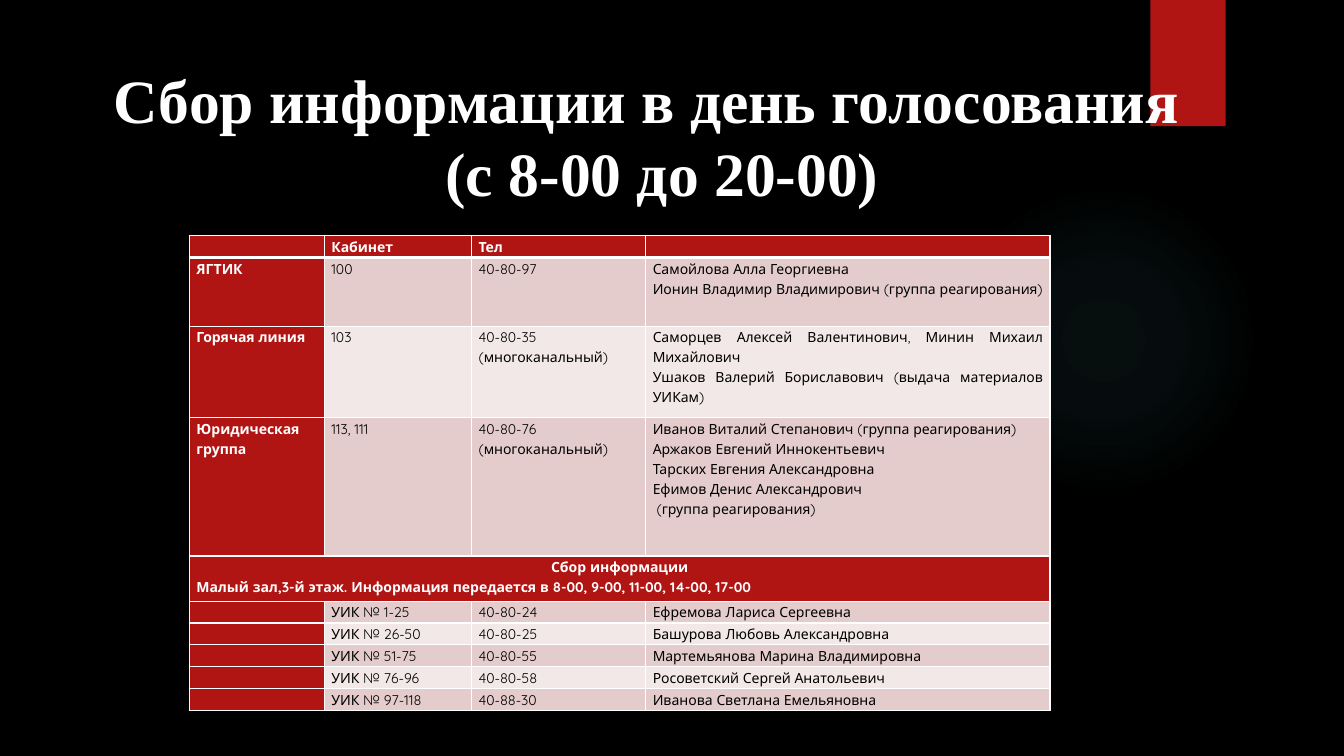
import pptx
import pptx.util
import pptx.dml.color
import pptx.enum.shapes
import pptx.enum.text
import pptx.oxml
import pptx.oxml.ns
from lxml import etree

Cm = pptx.util.Cm
Pt = pptx.util.Pt
ALIGN = pptx.enum.text.PP_ALIGN
SHAPE = pptx.enum.shapes.MSO_SHAPE
qn = pptx.oxml.ns.qn

COLORS = {
    "background": "000000",
    "red": "B01513",
    "white": "FFFFFF",
    "black": "000000",
    "dark_band": "E4CCCC",
    "light_band": "F2E8E7",
    "glow": "50B9C1",
}
TITLE = ["Сбор информации в день голосования ", " (с 8-00 до 20-00)"]
COL_WIDTHS = [3.4, 3.71, 4.39, 10.19]
ROW_HEIGHTS = [0.55, 1.73, 2.31, 3.48, 1.14] + [0.55] * 5
SECTION_ROW = 4
ROWS = [
    ["", "Кабинет", "Тел", ""],
    ["ЯГТИК", "100", "40-80-97",
     "Самойлова Алла Георгиевна\n"
     "Ионин Владимир Владимирович (группа реагирования)"],
    ["Горячая линия", "103", "40-80-35 (многоканальный)",
     "Саморцев Алексей Валентинович, Минин Михаил Михайлович\n"
     "Ушаков Валерий Бориславович (выдача материалов УИКам)"],
    ["Юридическая группа ", "113, 111", "40-80-76 (многоканальный)",
     "Иванов Виталий Степанович (группа реагирования)\n"
     "Аржаков Евгений Иннокентьевич\n"
     "Тарских Евгения Александровна\n"
     "Ефимов Денис Александрович\n"
     " (группа реагирования)"],
    ["Сбор информации\n"
     "Малый зал,3-й этаж. Информация передается в 8-00, 9-00, 11-00, 14-00, 17-00",
     "", "", ""],
    ["", "УИК № 1-25", "40-80-24", "Ефремова Лариса Сергеевна"],
    ["", "УИК № 26-50", "40-80-25", "Башурова Любовь Александровна"],
    ["", "УИК № 51-75", "40-80-55", "Мартемьянова Марина Владимировна"],
    ["", "УИК № 76-96", "40-80-58", "Росоветский Сергей Анатольевич"],
    ["", "УИК № 97-118", "40-88-30", "Иванова Светлана Емельяновна"],
]


def rgb(name):
    return pptx.dml.color.RGBColor.from_string(COLORS[name])


def add_plain_shape(s, kind, left, top, width, height):
    sp = s.shapes.add_shape(kind, Cm(left), Cm(top), Cm(width), Cm(height))
    sp.shadow.inherit = False
    sp.line.fill.background()
    return sp


def add_glow(s):
    sp = add_plain_shape(s, SHAPE.OVAL, 23.9, 4.65, 7.82, 7.82)
    stops = "".join(
        f'<a:gs pos="{pos * 1000}"><a:srgbClr val="{COLORS["glow"]}">'
        f'<a:alpha val="{alpha * 1000}"/></a:srgbClr></a:gs>'
        for pos, alpha in [(0, 7), (36, 6), (69, 0)])
    grad = pptx.oxml.parse_xml(
        f'<a:gradFill {pptx.oxml.ns.nsdecls("a")}><a:gsLst>{stops}</a:gsLst>'
        '<a:path path="circle"><a:fillToRect l="50000" t="50000" r="50000" b="50000"/>'
        '</a:path></a:gradFill>')
    sp.element.spPr.find(qn("a:prstGeom")).addnext(grad)


def add_run(p, text, font, size, color, bold):
    r = p.add_run()
    r.text = text
    r.font.name = font
    r.font.size = Pt(size)
    r.font.bold = bold
    r.font.color.rgb = rgb(color)


def add_title(s):
    sp = s.shapes.add_textbox(Cm(1.8), Cm(1.27), Cm(29.39), Cm(3.89))
    tf = sp.text_frame
    tf.word_wrap = True
    tf.margin_top = Cm(0.28)
    p = tf.paragraphs[0]
    p.alignment = ALIGN.CENTER
    for i, line in enumerate(TITLE):
        if i:
            p.add_line_break()
        add_run(p, line, "Times New Roman", 44, "white", True)


def set_borders(cell, widths):
    tcPr = cell._tc.get_or_add_tcPr()
    for side, width in widths.items():
        ln = etree.SubElement(tcPr, qn(f"a:ln{side}"), w=str(Pt(width)))
        fill = etree.SubElement(ln, qn("a:solidFill"))
        etree.SubElement(fill, qn("a:srgbClr"), val=COLORS["white"])


def fill_cell(cell, text, fill, color, bold):
    cell.margin_left = cell.margin_right = Cm(0.18)
    cell.margin_top = cell.margin_bottom = 0
    cell.fill.solid()
    cell.fill.fore_color.rgb = rgb(fill)
    tf = cell.text_frame
    for i, line in enumerate(text.split("\n")):
        p = tf.add_paragraph() if i else tf.paragraphs[0]
        p.alignment = ALIGN.JUSTIFY
        p.line_spacing = 1.15
        if line:
            add_run(p, line, "Quicksand", 10, color, bold)
        else:
            etree.SubElement(p._p, qn("a:endParaRPr"), sz="1000")


def add_contacts_table(s):
    frame = s.shapes.add_table(len(ROWS), len(COL_WIDTHS), Cm(4.77), Cm(5.94),
                               Cm(sum(COL_WIDTHS)), Cm(sum(ROW_HEIGHTS)))
    table = frame.table
    for column, width in zip(table.columns, COL_WIDTHS):
        column.width = Cm(width)
    for i, (row, height) in enumerate(zip(table.rows, ROW_HEIGHTS)):
        row.height = Cm(height)
        band = "dark_band" if i % 2 else "light_band"
        for j, text in enumerate(ROWS[i]):
            cell = table.cell(i, j)
            accent = j == 0 or i in (0, SECTION_ROW)
            set_borders(cell, {"L": 1, "R": 1, "T": 3 if i == 1 else 1,
                               "B": 3 if i == 0 else 1})
            fill_cell(cell, text, "red" if accent else band,
                      "white" if accent else "black", accent)
    section = table.cell(SECTION_ROW, 0)
    section.merge(table.cell(SECTION_ROW, len(COL_WIDTHS) - 1))
    heading, note = section.text_frame.paragraphs
    heading.alignment = ALIGN.CENTER
    note.alignment = ALIGN.LEFT


def main():
    prs = pptx.Presentation()
    prs.slide_width, prs.slide_height = Cm(33.87), Cm(19.05)
    s = prs.slides.add_slide(prs.slide_layouts[6])
    s.background.fill.solid()
    s.background.fill.fore_color.rgb = rgb("background")
    add_glow(s)
    ribbon = add_plain_shape(s, SHAPE.RECTANGLE, 28.99, 0, 1.9, 3.18)
    ribbon.fill.solid()
    ribbon.fill.fore_color.rgb = rgb("red")
    add_title(s)
    add_contacts_table(s)
    prs.save("out.pptx")


if __name__ == "__main__":
    main()
